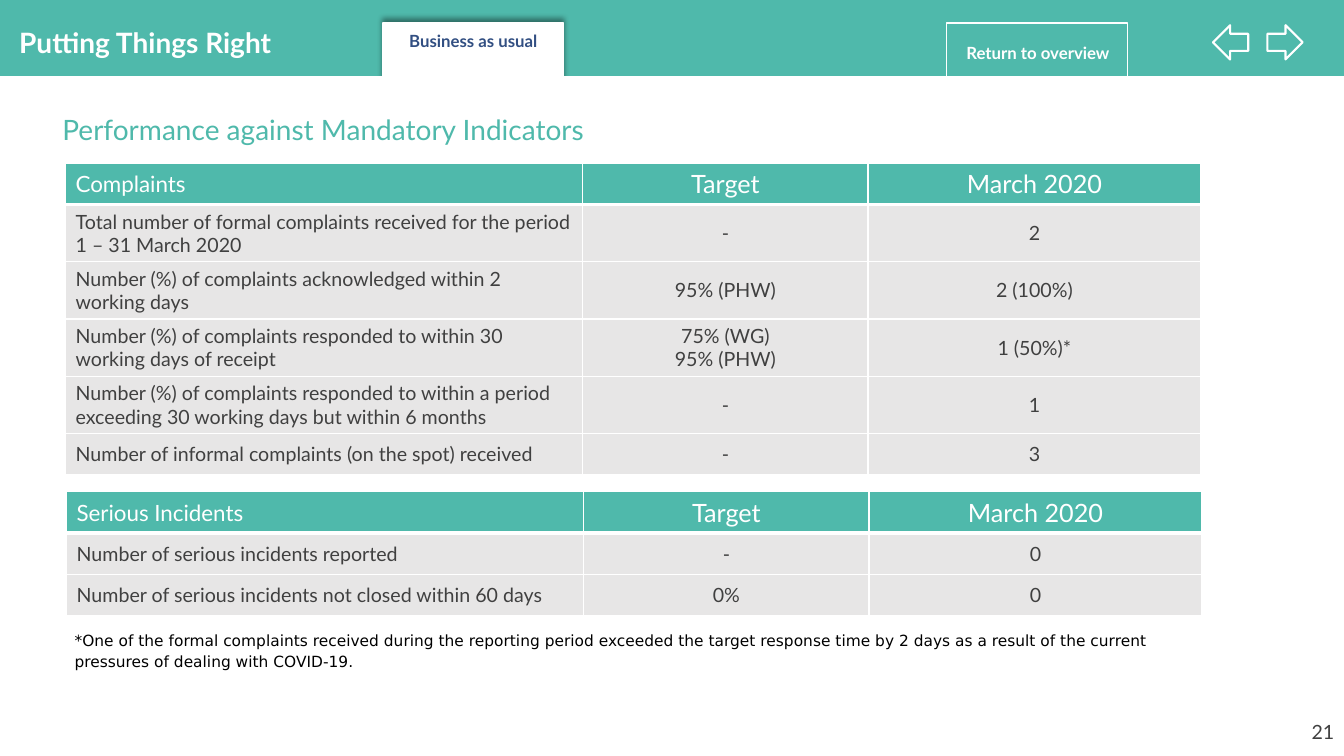
"""Build the Putting Things Right slide on complaints and serious incidents."""
import pptx
import pptx.util
import pptx.dml.color
import pptx.enum.shapes
import pptx.enum.text
import pptx.oxml
import pptx.oxml.ns
from lxml import etree

Inches, Pt = pptx.util.Inches, pptx.util.Pt
SHAPE = pptx.enum.shapes.MSO_SHAPE
ALIGN = pptx.enum.text.PP_ALIGN
MIDDLE = pptx.enum.text.MSO_ANCHOR.MIDDLE

THEME = {
    "font": "Lato", "note_font": "DejaVu Sans",
    "teal": "4FB9AB", "white": "FFFFFF", "navy": "324F82",
    "grey": "E7E6E6", "text": "404040", "black": "000000",
    "title": 20, "head": 18, "head_first": 16, "body": 14, "button": 12, "note": 11,
}

HEADINGS = ["Target", "March 2020"]
COMPLAINTS = [
    ["Complaints"] + HEADINGS,
    ["Total number of formal complaints received for the period 1 – 31 March 2020", "-", "2"],
    ["Number (%) of complaints acknowledged within 2 working days", "95% (PHW)", "2 (100%)"],
    ["Number (%) of complaints responded to within 30 working days of receipt",
     "75% (WG)\n95% (PHW)", "1 (50%)*"],
    ["Number (%) of complaints responded to within a period exceeding 30 working days "
     "but within 6 months", "-", "1"],
    ["Number of informal complaints (on the spot) received", "-", "3"],
]
INCIDENTS = [
    ["Serious Incidents"] + HEADINGS,
    ["Number of serious incidents reported", "-", "0"],
    ["Number of serious incidents not closed within 60 days", "0%", "0"],
]
NOTE = ("*One of the formal complaints received during the reporting period exceeded the target "
        "response time by 2 days as a result of the current pressures of dealing with COVID-19.")
COLUMNS = [5.13, 2.83, 3.3]
ROW_HEIGHT = 0.41
TABLES = [(0.65, 1.62, COMPLAINTS), (0.66, 4.88, INCIDENTS)]

# left, top, width, height, text, size, colour, bold, centred, inset
LABELS = [
    ((0.19, 0.25, 3.39, 0.34), "Putting Things Right", "title", "white", True, True, False),
    ((3.97, 0.31, 1.45, 0.4), "Business as usual", "button", "navy", True, True, True),
    ((9.24, 0.42, 2.11, 0.2), "Return to overview", "button", "white", True, True, True),
    ((0.52, 1.07, 9.31, 0.44), "Performance against Mandatory Indicators",
     "title", "teal", False, False, False),
    ((12.91, 7.09, 0.46, 0.34), "21", "body", "text", False, False, False),
]


def rgb(name):
    return pptx.dml.color.RGBColor.from_string(THEME[name])


def add_text(tf, text, size, color, bold=False, align=ALIGN.LEFT, font="font"):
    for i, line in enumerate(text.split("\n")):
        p = tf.paragraphs[0] if i == 0 else tf.add_paragraph()
        p.alignment = align
        r = p.add_run()
        r.text = line
        r.font.name, r.font.size, r.font.bold = THEME[font], Pt(THEME[size]), bold
        r.font.color.rgb = rgb(color)


def add_box(s, kind, box, fill=None, line=None, width=1):
    sp = s.shapes.add_shape(kind, *map(Inches, box))
    sp.shadow.inherit = False
    if fill:
        sp.fill.solid()
        sp.fill.fore_color.rgb = rgb(fill)
    else:
        sp.fill.background()
    if line:
        sp.line.color.rgb = rgb(line)
        sp.line.width = Pt(width)
    else:
        sp.line.fill.background()
    return sp


def add_upward_shadow(sp):
    effects = sp._element.spPr.find(pptx.oxml.ns.qn("a:effectLst"))
    effects.append(pptx.oxml.parse_xml(
        f'<a:outerShdw {pptx.oxml.ns.nsdecls("a")} blurRad="{Pt(4)}" dist="{Pt(3)}" '
        f'dir="16200000" rotWithShape="0"><a:srgbClr val="{THEME["black"]}">'
        '<a:alpha val="40000"/></a:srgbClr></a:outerShdw>'))


def add_borders(cell, bottom=1):
    tcPr = cell._tc.get_or_add_tcPr()
    for side, width in (("L", 1), ("R", 1), ("T", 1), ("B", bottom)):
        ln = etree.SubElement(tcPr, pptx.oxml.ns.qn(f"a:ln{side}"), w=str(Pt(width)))
        fill = etree.SubElement(ln, pptx.oxml.ns.qn("a:solidFill"))
        etree.SubElement(fill, pptx.oxml.ns.qn("a:srgbClr"), val=THEME["white"])


def add_grid(s, left, top, rows):
    table = s.shapes.add_table(len(rows), len(COLUMNS), Inches(left), Inches(top),
                               Inches(sum(COLUMNS)), Inches(ROW_HEIGHT * len(rows))).table
    table.horz_banding = False
    for column, width in zip(table.columns, COLUMNS):
        column.width = Inches(width)
    for i, row in enumerate(rows):
        table.rows[i].height = Inches(ROW_HEIGHT)
        for j, text in enumerate(row):
            cell = table.cell(i, j)
            header = i == 0
            add_borders(cell, 3 if header else 1)
            cell.fill.solid()
            cell.fill.fore_color.rgb = rgb("teal" if header else "grey")
            cell.vertical_anchor = MIDDLE
            size = ("head" if j else "head_first") if header else "body"
            add_text(cell.text_frame, text, size, "white" if header else "text",
                     align=ALIGN.CENTER if j else ALIGN.LEFT)


def add_note(s):
    table = s.shapes.add_table(1, 1, Inches(0.62), Inches(6.25), Inches(11.5), Inches(0.42)).table
    table.first_row = table.horz_banding = False
    cell = table.cell(0, 0)
    add_borders(cell)
    cell.fill.background()
    cell.margin_left = cell.margin_right = Inches(0.12)
    cell.margin_top = cell.margin_bottom = 0
    add_text(cell.text_frame, NOTE, "note", "black", font="note_font")
    p = cell.text_frame.paragraphs[0]
    p.line_spacing, p.space_after = 1.15, Pt(10)


def add_label(s, box, text, size, color, bold, flush, centred):
    tf = s.shapes.add_textbox(*map(Inches, box)).text_frame
    tf.word_wrap = True
    if flush:
        tf.margin_left = tf.margin_right = tf.margin_top = tf.margin_bottom = 0
    add_text(tf, text, size, color, bold, ALIGN.CENTER if centred else ALIGN.LEFT)


def main():
    prs = pptx.Presentation()
    prs.slide_width, prs.slide_height = Inches(13.33), Inches(7.5)
    s = prs.slides.add_slide(prs.slide_layouts[6])
    add_box(s, SHAPE.RECTANGLE, (0, 0, 13.33, 0.83), "teal")
    add_upward_shadow(add_box(s, SHAPE.RECTANGLE, (3.8, 0.23, 1.79, 1.06), "white", "white"))
    add_box(s, SHAPE.RECTANGLE, (0, 0.76, 13.33, 1.46), "white", "white")
    add_box(s, SHAPE.RECTANGLE, (9.39, 0.23, 1.79, 1.06), line="white")
    for left, angle in ((12.03, 180), (12.57, 0)):
        arrow = add_box(s, SHAPE.RIGHT_ARROW, (left, 0.25, 0.35, 0.34), line="white", width=1.5)
        arrow.rotation = angle
    for label in LABELS:
        add_label(s, *label)
    for left, top, rows in TABLES:
        add_grid(s, left, top, rows)
    add_note(s)
    prs.save("out.pptx")


if __name__ == "__main__":
    main()
